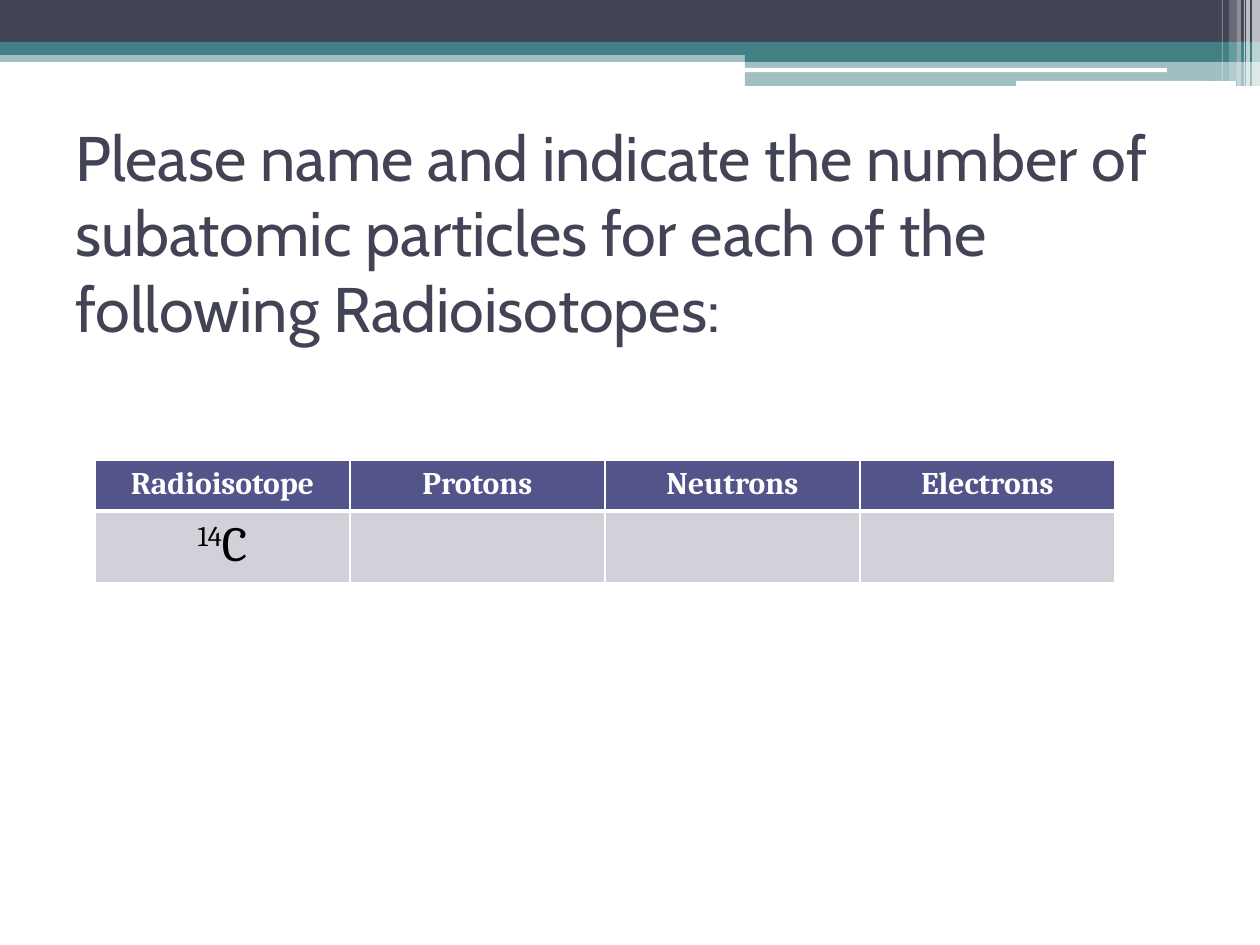
from dataclasses import dataclass

from lxml.etree import SubElement
from pptx import Presentation
from pptx.dml.color import RGBColor as Rgb
from pptx.enum.shapes import MSO_SHAPE as Geo
from pptx.enum.text import MSO_ANCHOR as Anchor, PP_ALIGN as Align
from pptx.oxml import parse_xml
from pptx.oxml.ns import nsdecls, qn
from pptx.util import Emu, Pt

SCALE = 914400 / 126  # EMU in one px
WIDE, HIGH = 1260, 945
HEX = {
    "navy": "424456",
    "teal": "438086",
    "white": "FFFFFF",
    "black": "000000",
    "head": "53548A",
    "body": "D1D1DA",
}


@dataclass
class Bar:
    left: int
    top: int
    width: int
    height: int
    fill: str
    alpha: int = 100
    geo: Geo = Geo.RECTANGLE


BARS = [
    # Bands across the top
    Bar(0, 50, WIDE, 12, "teal", 50),
    Bar(0, 0, WIDE, 42, "navy"),
    Bar(0, 42, WIDE, 13, "teal"),
    # Step at the right, with its white lines
    Bar(745, 49, 515, 13, "teal"),
    Bar(745, 62, 515, 24, "teal", 50),
    Bar(745, 68, 422, 4, "white", geo=Geo.ROUNDED_RECTANGLE),
    Bar(1016, 81, 220, 5, "white", geo=Geo.ROUNDED_RECTANGLE),
    # Upright stripes in the corner
    Bar(1252, 0, 8, 86, "white", 65),
    Bar(1246, 0, 4, 86, "white", 65),
    Bar(1244, 0, 1, 86, "white", 60),
    Bar(1237, 0, 4, 86, "white", 40),
    Bar(1229, 0, 8, 81, "white", 20),
    Bar(1222, 0, 1, 81, "white", 30),
]
TITLE = ("Please name and indicate the number of subatomic particles "
         "for each of the following Radioisotopes:")
HEADS = ["Radioisotope", "Protons", "Neutrons", "Electrons"]
COL, ROWS = 255, (51, 69)


def px(*nums: int) -> list[Emu]:
    return [Emu(round(num * SCALE)) for num in nums]


def tint(name: str) -> Rgb:
    return Rgb.from_string(HEX[name])


def style(font, face: str, size: int, color: str, bold: bool = False) -> None:
    font.name, font.size, font.bold = face, Pt(size), bold
    font.color.rgb = tint(color)


def draw_bar(slide, bar: Bar) -> None:
    shape = slide.shapes.add_shape(
        bar.geo, *px(bar.left, bar.top, bar.width, bar.height))
    shape.shadow.inherit = False
    shape.line.fill.background()
    shape.fill.solid()
    shape.fill.fore_color.rgb = tint(bar.fill)
    if bar.alpha < 100:
        color = shape._element.spPr.find(qn("a:solidFill"))[0]
        SubElement(color, qn("a:alpha"), val=str(bar.alpha * 1000))


def draw_title(slide) -> None:
    frame = slide.shapes.add_textbox(*px(63, 158, 1134, 147)).text_frame
    frame.word_wrap = True
    frame.vertical_anchor = Anchor.MIDDLE
    frame.text = TITLE
    style(frame.paragraphs[0].font, "Cabin", 36, "navy")


def edge_cell(cell, top: int, bottom: int) -> None:
    """Give a cell white borders, with widths in points."""
    props = cell._tc.get_or_add_tcPr()
    sides = {"lnL": 1, "lnR": 1, "lnT": top, "lnB": bottom}
    for spot, (tag, size) in enumerate(sides.items()):
        props.insert(spot, parse_xml(
            f'<a:{tag} {nsdecls("a")} w="{Pt(size)}"><a:solidFill>'
            f'<a:srgbClr val="{HEX["white"]}"/></a:solidFill></a:{tag}>'))


def fill_cell(cell, color: str, top: int, bottom: int) -> None:
    cell.fill.solid()
    cell.fill.fore_color.rgb = tint(color)
    edge_cell(cell, top, bottom)


def draw_table(slide) -> None:
    table = slide.shapes.add_table(
        len(ROWS), len(HEADS),
        *px(95, 460, COL * len(HEADS), sum(ROWS))).table
    table.horz_banding = False
    for row, high in zip(table.rows, px(*ROWS)):
        row.height = high
    for num, head in enumerate(HEADS):
        table.columns[num].width = px(COL)[0]
        cell = table.cell(0, num)
        fill_cell(cell, "head", 1, 3)
        fill_cell(table.cell(1, num), "body", 3, 1)
        cell.text = head
        para = cell.text_frame.paragraphs[0]
        para.alignment = Align.CENTER
        style(para.font, "Cambria", 18, "white", True)

    # Isotope, with its mass number raised
    para = table.cell(1, 0).text_frame.paragraphs[0]
    para.alignment = Align.CENTER
    style(para.font, "Cambria", 28, "black")
    mass, atom = para.add_run(), para.add_run()
    mass.text, atom.text = "14", "C"
    mass._r.get_or_add_rPr().set("baseline", "30000")


def main() -> None:
    deck = Presentation()
    deck.slide_width, deck.slide_height = px(WIDE, HIGH)
    slide = deck.slides.add_slide(deck.slide_layouts[6])
    for bar in BARS:
        draw_bar(slide, bar)
    draw_title(slide)
    draw_table(slide)
    deck.save("out.pptx")


if __name__ == "__main__":
    main()
